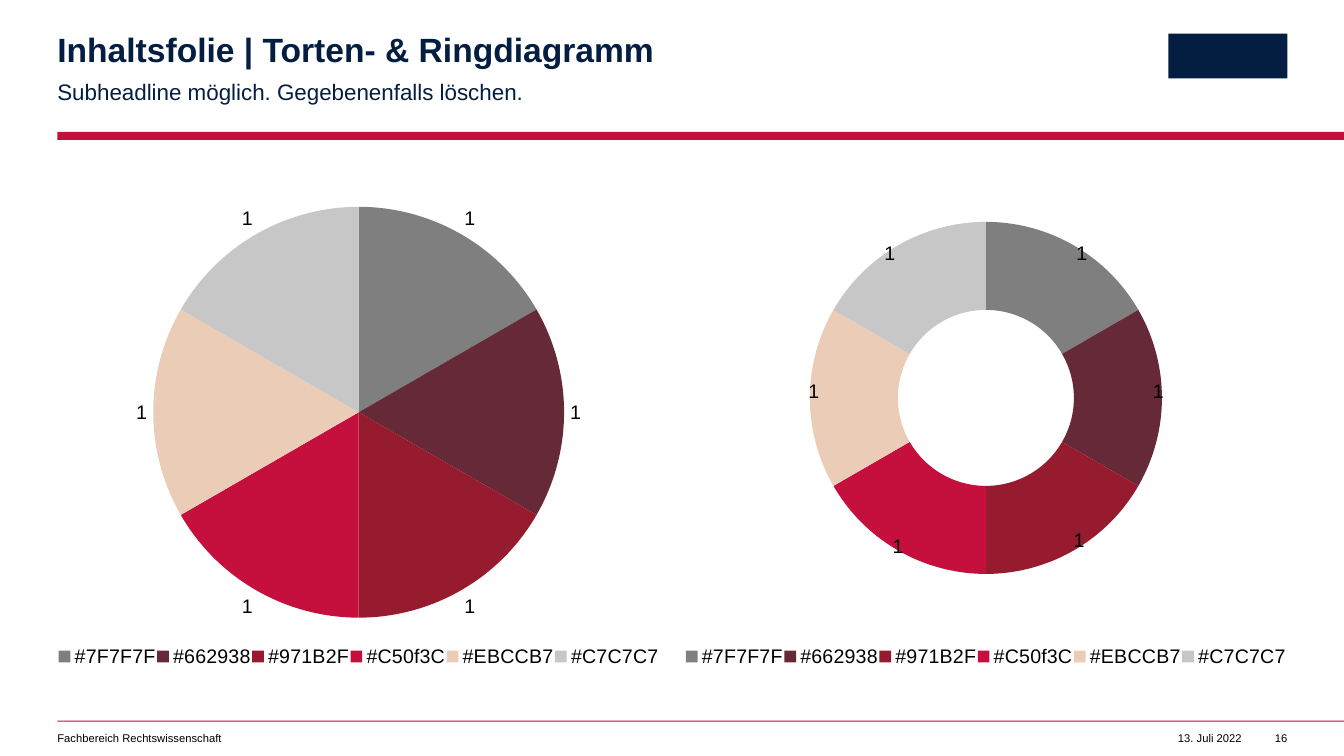
from lxml import etree
from pptx import Presentation
from pptx.chart.data import CategoryChartData
from pptx.dml.color import RGBColor
from pptx.enum.chart import XL_CHART_TYPE, XL_LABEL_POSITION, XL_LEGEND_POSITION
from pptx.enum.shapes import MSO_SHAPE
from pptx.enum.text import MSO_ANCHOR, MSO_AUTO_SIZE, PP_ALIGN
from pptx.oxml.ns import qn
from pptx.util import Pt

PIE, DOUGHNUT = XL_CHART_TYPE.PIE, XL_CHART_TYPE.DOUGHNUT
LEFT, RIGHT = PP_ALIGN.LEFT, PP_ALIGN.RIGHT
OUTSIDE = XL_LABEL_POSITION.OUTSIDE_END
BOTTOM = XL_LEGEND_POSITION.BOTTOM
RECT = MSO_SHAPE.RECTANGLE

FONT = "Arial"
NAVY = RGBColor(0x04, 0x1E, 0x42)
RED = RGBColor(0xC5, 0x0F, 0x3C)
BLACK = RGBColor(0, 0, 0)

TITLE = "Inhaltsfolie | Torten- & Ringdiagramm"
SUBHEADLINE = "Subheadline möglich. Gegebenenfalls löschen."
DEPARTMENT = "Fachbereich Rechtswissenschaft"
DATE = "13. Juli 2022"
PAGE = "16"
SERIES = "Series 1"
SLICES = [
    ("#7F7F7F", 1),
    ("#662938", 1),
    ("#971B2F", 1),
    ("#C50f3C", 1),
    ("#EBCCB7", 1),
    ("#C7C7C7", 1),
]

SLIDE_W, SLIDE_H = 960, 540
MARGIN_L, MARGIN_R = 41, 919.5
GAP = 17.5
COLUMN_W = (MARGIN_R - MARGIN_L - GAP) / 2
HEADING_W = 539
CHART_TOP, CHART_H = 128, 360
FOOTER_TOP, FOOTER_H = 522.5, 9.5

# Left, top, width, height in points inside each chart
PIE_PLOT = (68.5, 19.75, 293.5, 293.5)
RING_PLOT = (89.5, 30.5, 251.5, 251.5)
LEGEND_AREA = (0, 330, COLUMN_W, 22)
RING_HOLE = 80
# Shift of each ring label in points
RING_LABEL_SHIFTS = [
    (21.5, -21.5), (29, -4.5), (19.5, 20),
    (-15.5, 24.5), (-28.5, -4.5), (-21.5, -21.5),
]


def place(shape, left, top, width, height):
    shape.left, shape.top = Pt(left), Pt(top)
    shape.width, shape.height = Pt(width), Pt(height)


def format_font(font, size, color=BLACK, bold=False):
    font.name, font.size, font.bold = FONT, Pt(size), bold
    font.color.rgb = color


def write(shape, text, size=8, color=BLACK, bold=False, align=LEFT,
          line_spacing=None, space_after=0, inset_right=0, wrap=True):
    frame = shape.text_frame
    frame.margin_left = frame.margin_top = frame.margin_bottom = 0
    frame.margin_right = Pt(inset_right)
    frame.word_wrap = wrap
    frame.auto_size = MSO_AUTO_SIZE.SHAPE_TO_FIT_TEXT
    frame.vertical_anchor = MSO_ANCHOR.TOP
    paragraph = frame.paragraphs[0]
    paragraph.alignment = align
    paragraph.line_spacing = line_spacing
    paragraph.space_before, paragraph.space_after = Pt(0), Pt(space_after)
    run = paragraph.add_run()
    run.text = text
    format_font(run.font, size, color, bold)
    return paragraph


def remove_bullet(paragraph):
    properties = paragraph._p.get_or_add_pPr()
    properties.set("marL", "0")
    properties.set("indent", "0")
    etree.SubElement(properties, qn("a:buNone"))


def add_bar(slide, left, top, width, height, color):
    bar = slide.shapes.add_shape(RECT, Pt(left), Pt(top), Pt(width), Pt(height))
    bar.shadow.inherit = False
    bar.fill.solid()
    bar.fill.fore_color.rgb = color
    bar.line.fill.background()


def set_layout(parent, index, lengths, **modes):
    """Put a manual layout, given in points, into a chart part as child number index."""
    for old_layout in parent.findall(qn("c:layout")):
        parent.remove(old_layout)
    layout = etree.Element(qn("c:layout"))
    manual = etree.SubElement(layout, qn("c:manualLayout"))
    shares = [length / full for length, full in zip(lengths, (COLUMN_W, CHART_H) * 2)]
    settings = {**modes, **dict(zip("xywh", shares))}
    for tag, value in settings.items():
        etree.SubElement(manual, qn("c:" + tag)).set("val", str(value))
    parent.insert(index, layout)


def add_round_chart(slide, kind, left, plot_box):
    data = CategoryChartData()
    data.categories = [name for name, _ in SLICES]
    data.add_series(SERIES, [value for _, value in SLICES])
    chart = slide.shapes.add_chart(
        kind, Pt(left), Pt(CHART_TOP), Pt(COLUMN_W), Pt(CHART_H), data).chart
    chart.has_title = False
    format_font(chart.font, 10)
    chart.has_legend = True
    chart.legend.position = BOTTOM
    chart.legend.include_in_layout = False
    format_font(chart.legend.font, 14)

    plot = chart.plots[0]
    plot.vary_by_categories = True
    series = plot.series[0]
    for index, (name, _) in enumerate(SLICES):
        fill = series.points[index].format.fill
        fill.solid()
        fill.fore_color.rgb = RGBColor.from_string(name[1:].upper())
    labels = series.data_labels
    labels.show_value = True
    format_font(labels.font, 14)
    if kind == PIE:
        labels.position = OUTSIDE

    chart_xml = chart._chartSpace.chart
    set_layout(chart_xml.plotArea, 0, plot_box,
               layoutTarget="inner", xMode="edge", yMode="edge")
    set_layout(chart_xml.find(qn("c:legend")), 1, LEGEND_AREA,
               xMode="edge", yMode="edge")
    return chart


def shape_ring(chart):
    """Set the ring's hole and the place of each label."""
    hole = chart._chartSpace.chart.plotArea.find(".//" + qn("c:holeSize"))
    hole.set("val", str(RING_HOLE))
    series = chart.plots[0].series[0]
    for index in range(len(SLICES)):
        format_font(series.points[index].data_label.font, 14)
    labels = series._element.iter(qn("c:dLbl"))
    for label, shift in zip(labels, RING_LABEL_SHIFTS):
        set_layout(label, 1, shift)


def main():
    deck = Presentation()
    deck.slide_width, deck.slide_height = Pt(SLIDE_W), Pt(SLIDE_H)
    slide = deck.slides.add_slide(deck.slide_layouts[1])

    title, subheadline = slide.placeholders
    place(title, MARGIN_L, 24, HEADING_W, 26)
    write(title, TITLE, size=24, color=NAVY, bold=True, line_spacing=0.9)
    place(subheadline, MARGIN_L, 54, HEADING_W, 19.5)
    remove_bullet(write(subheadline, SUBHEADLINE, size=16, color=NAVY,
                        line_spacing=1.1, space_after=12, inset_right=28))

    for top, height in ((94.25, 5.75), (514.75, 0.75)):
        add_bar(slide, MARGIN_L, top, SLIDE_W - MARGIN_L, height, RED)
    add_bar(slide, 834.5, 24, 85, 32, NAVY)

    add_round_chart(slide, PIE, MARGIN_L, PIE_PLOT)
    shape_ring(add_round_chart(slide, DOUGHNUT, MARGIN_R - COLUMN_W, RING_PLOT))

    footer = [
        (DEPARTMENT, MARGIN_L, COLUMN_W, LEFT, True),
        (DATE, 820, 67, RIGHT, False),
        (PAGE, 904.5, 15, RIGHT, False),
    ]
    for text, left, width, align, wrap in footer:
        box = slide.shapes.add_textbox(Pt(left), Pt(FOOTER_TOP), Pt(width), Pt(FOOTER_H))
        write(box, text, align=align, wrap=wrap)

    deck.save("out.pptx")


if __name__ == "__main__":
    main()
